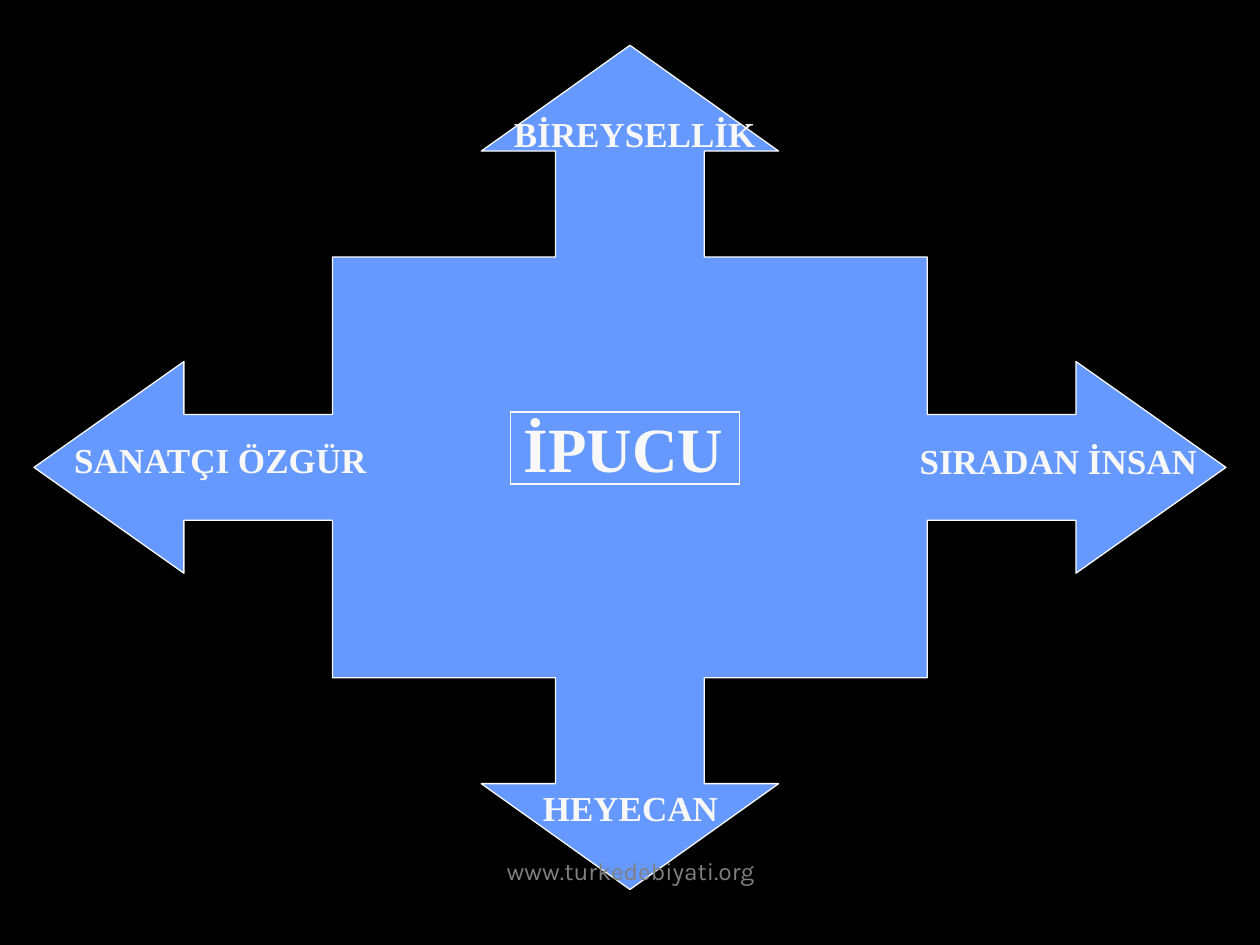
"""Build a slide with a four-way arrow around a central hint."""
from dataclasses import dataclass

import pptx
import pptx.dml.color
import pptx.enum.text
import pptx.oxml
import pptx.oxml.ns
import pptx.util
from pptx.util import Inches

RGBColor = pptx.dml.color.RGBColor
Anchor = pptx.enum.text.MSO_ANCHOR
Align = pptx.enum.text.PP_ALIGN
Fit = pptx.enum.text.MSO_AUTO_SIZE

BLACK = RGBColor(0x00, 0x00, 0x00)
BLUE = RGBColor(0x66, 0x99, 0xFF)
WHITE = RGBColor(0xF8, 0xF8, 0xF8)
GRAY = RGBColor(0x80, 0x80, 0x80)
SERIF = "Times New Roman"
MID = (5, 3.71)
QUARTER = [(0, 3.35), (1.18, 2.51), (0.59, 2.51), (0.59, 1.67), (2.36, 1.67),
           (2.36, 0.42), (3.54, 0.42), (3.54, 0.84), (4.73, 0)]


@dataclass
class Label:
    """Text of one label and its box in inches."""
    text: str
    left: float
    top: float
    width: float
    height: float = 0.43


HINT = Label("İPUCU", 4.06, 3.2, 1.78, 0.7)
SITE = Label("www.turkedebiyati.org", 3.42, 6.58, 3.17, 0.5)
LABELS = [
    Label("BİREYSELLİK", 3.98, 0.84, 2.12),
    Label("SIRADAN İNSAN", 7.2, 3.44, 2.41),
    Label("SANATÇI ÖZGÜR", 0.49, 3.43, 2.54),
    Label("HEYECAN", 4.21, 6.19, 1.59),
]


def write(slide, item: Label, *, size: float = 20, font: str = SERIF,
          color: RGBColor = WHITE, bold: bool = True, wrap: bool = False,
          align=Align.LEFT, anchor=Anchor.TOP, fit=Fit.SHAPE_TO_FIT_TEXT) -> None:
    """Add a text box with formatted text."""
    box = slide.shapes.add_textbox(
        *map(Inches, (item.left, item.top, item.width, item.height)))
    frame = box.text_frame
    frame.text = item.text
    frame.word_wrap = wrap
    frame.auto_size = fit
    frame.vertical_anchor = anchor
    para = frame.paragraphs[0]
    para.alignment = align
    face = para.runs[0].font
    face.name, face.size, face.bold = font, pptx.util.Pt(size), bold
    face.color.rgb = color


def add_cross(slide) -> None:
    """Draw the four-way arrow by mirroring one quarter."""
    right = QUARTER + [(x, -y) for x, y in QUARTER[-2::-1]]
    left = [(-x, y) for x, y in right[-2:0:-1]]
    points = [(Inches(MID[0] + x), Inches(MID[1] - y)) for x, y in right + left]
    pen = slide.shapes.build_freeform(*points[0])
    pen.add_line_segments(points[1:], close=True)
    cross = pen.convert_to_shape()
    cross.shadow.inherit = False
    cross.fill.solid()
    cross.fill.fore_color.rgb = BLUE
    cross.line.color.rgb = WHITE
    cross.line.width = pptx.util.Pt(0.75)


def add_frame(slide) -> None:
    """Add the one-cell table that frames the hint."""
    table = slide.shapes.add_table(
        1, 1, *map(Inches, (4.05, 3.27, 1.82, 0.57))).table
    table.first_row = table.horz_banding = False
    cell = table.cell(0, 0)
    cell.fill.background()
    props = cell._tc.get_or_add_tcPr()
    for spot, side in enumerate("LRTB"):
        props.insert(spot, pptx.oxml.parse_xml(
            f'<a:ln{side} {pptx.oxml.ns.nsdecls("a")} w="12700"><a:solidFill>'
            f'<a:srgbClr val="{WHITE}"/></a:solidFill></a:ln{side}>'))


def main() -> None:
    """Build and save the deck."""
    deck = pptx.Presentation()
    deck.slide_width, deck.slide_height = Inches(10), Inches(7.5)
    slide = deck.slides.add_slide(deck.slide_layouts[6])
    slide.background.fill.solid()
    slide.background.fill.fore_color.rgb = BLACK
    add_cross(slide)
    add_frame(slide)
    write(slide, HINT, size=36)
    for item in LABELS:
        write(slide, item)
    write(slide, SITE, size=14, font="Karla", color=GRAY, bold=False, wrap=True,
          align=Align.CENTER, anchor=Anchor.BOTTOM, fit=Fit.NONE)
    deck.save("out.pptx")


if __name__ == "__main__":
    main()
